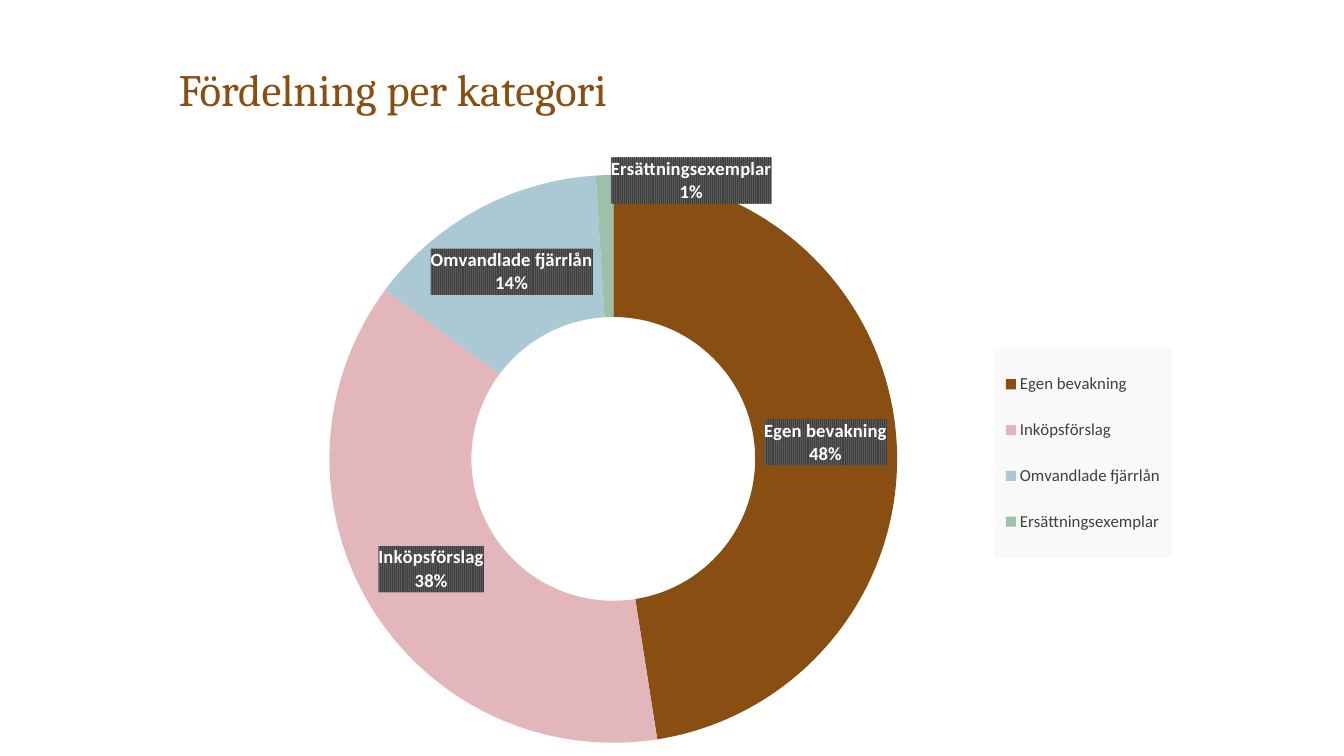
from copy import deepcopy

from lxml import etree
from pptx import Presentation
from pptx.chart.data import CategoryChartData as ChartData
from pptx.dml.color import RGBColor
from pptx.enum.chart import XL_CHART_TYPE as Kind, XL_LEGEND_POSITION as Side
from pptx.enum.text import MSO_ANCHOR as Anchor, PP_ALIGN as Align
from pptx.oxml import parse_xml
from pptx.oxml.ns import nsdecls, qn
from pptx.util import Cm, Pt

BROWN = RGBColor(0x89, 0x4E, 0x11)
PINK = RGBColor(0xE3, 0xB6, 0xBB)
BLUE = RGBColor(0xAB, 0xC9, 0xD4)
GREEN = RGBColor(0x9E, 0xC0, 0xAA)
WHITE = RGBColor(0xFF, 0xFF, 0xFF)
BLACK = RGBColor(0, 0, 0)
DARK = RGBColor(0x40, 0x40, 0x40)
GREY = RGBColor(0x59, 0x59, 0x59)
PALE = RGBColor(0xF9, 0xF9, 0xF9)

# Category, share, colour
PARTS = [
    ("Egen bevakning", 48, BROWN),
    ("Inköpsförslag", 38, PINK),
    ("Omvandlade fjärrlån", 14, BLUE),
    ("Ersättningsexemplar", 1, GREEN),
]


def style(font, name, size, color, bold=False):
    font.name, font.size, font.bold = name, Pt(size), bold
    font.color.rgb = color


def shade(fill):
    return parse_xml(f'<c:spPr {nsdecls("c", "a")}>{fill}<a:ln><a:noFill/></a:ln></c:spPr>')


def solid(color):
    return f'<a:solidFill><a:srgbClr val="{color}"/></a:solidFill>'


def stripes(front, back):
    return (f'<a:pattFill prst="narVert"><a:fgClr><a:srgbClr val="{front}"/></a:fgClr>'
            f'<a:bgClr><a:srgbClr val="{back}"/></a:bgClr></a:pattFill>')


def layout(**vals):
    """Manual layout in fractions of the chart area."""
    tags = "".join(f'<c:{tag} val="{val}"/>' for tag, val in vals.items())
    return parse_xml(f'<c:layout {nsdecls("c")}><c:manualLayout>{tags}</c:manualLayout></c:layout>')


def add_title(slide, text):
    title = slide.shapes.title
    title.left, title.top, title.width, title.height = Cm(4.5), Cm(0.99), Cm(24.51), Cm(2.74)
    frame = title.text_frame
    frame.text = text
    frame.vertical_anchor = Anchor.BOTTOM
    frame.margin_left = frame.margin_top = frame.margin_right = 0
    frame.margin_bottom = Cm(0.79)
    para = frame.paragraphs[0]
    para.alignment, para.line_spacing = Align.LEFT, 0.9
    style(para.runs[0].font, "Cambria", 32, BROWN)


def add_labels(series):
    labels = series.data_labels
    labels.show_percentage = labels.show_category_name = True
    labels.show_value = False
    labels.number_format, labels.number_format_is_linked = "0%", False
    style(labels.font, "Calibri", 13.3, WHITE, True)
    root = labels._element
    text = root.find(qn("c:txPr"))
    box = shade(stripes(DARK, GREY))
    text.addprevious(box)

    # The smallest slice has its label moved up and right
    own = parse_xml(f'<c:dLbl {nsdecls("c")}><c:idx val="{len(PARTS) - 1}"/></c:dLbl>')
    own.append(layout(x=0.09, y=-0.11))
    own.append(deepcopy(box))
    own.append(deepcopy(text))
    shows = dict(LegendKey=0, Val=0, CatName=1, SerName=0, Percent=1, BubbleSize=0)
    for name, val in shows.items():
        etree.SubElement(own, qn(f"c:show{name}")).set("val", str(val))
    root.insert(0, own)


def add_legend(chart):
    chart.has_legend = True
    legend = chart.legend
    legend.position, legend.include_in_layout = Side.RIGHT, False
    style(legend.font, "Calibri", 12, DARK)
    root = legend._element
    for old in root.findall(qn("c:layout")):
        root.remove(old)
    root.find(qn("c:legendPos")).addnext(
        layout(xMode="edge", yMode="edge", x=0.81, y=0.32, w=0.19, h=0.35))
    root.find(qn("c:txPr")).addprevious(shade(solid(PALE)))


def add_ring(slide):
    data = ChartData()
    data.categories = [name for name, _, _ in PARTS]
    data.add_series("Series 1", [share for _, share, _ in PARTS])
    chart = slide.shapes.add_chart(
        Kind.DOUGHNUT, Cm(5.87), Cm(3.96), Cm(23.67), Cm(15.06), data).chart
    chart.has_title = False
    style(chart.font, "Calibri", 10, BLACK)
    series = chart.plots[0].series[0]
    for i, (_, _, color) in enumerate(PARTS):
        look = series.points[i].format
        look.fill.solid()
        look.fill.fore_color.rgb = color
        look.line.fill.background()
    add_labels(series)
    add_legend(chart)

    # Place of the ring within the chart
    area = chart._chartSpace.chart.plotArea
    for old in area.findall(qn("c:layout")):
        area.remove(old)
    area.insert(0, layout(layoutTarget="inner", xMode="edge", yMode="edge",
                          x=0.1, y=0.03, w=0.61, h=0.95))


def main():
    deck = Presentation()
    deck.slide_width, deck.slide_height = Cm(33.87), Cm(19.05)
    slide = deck.slides.add_slide(deck.slide_layouts[5])
    add_title(slide, "Fördelning per kategori")
    add_ring(slide)
    deck.save("out.pptx")


if __name__ == "__main__":
    main()
